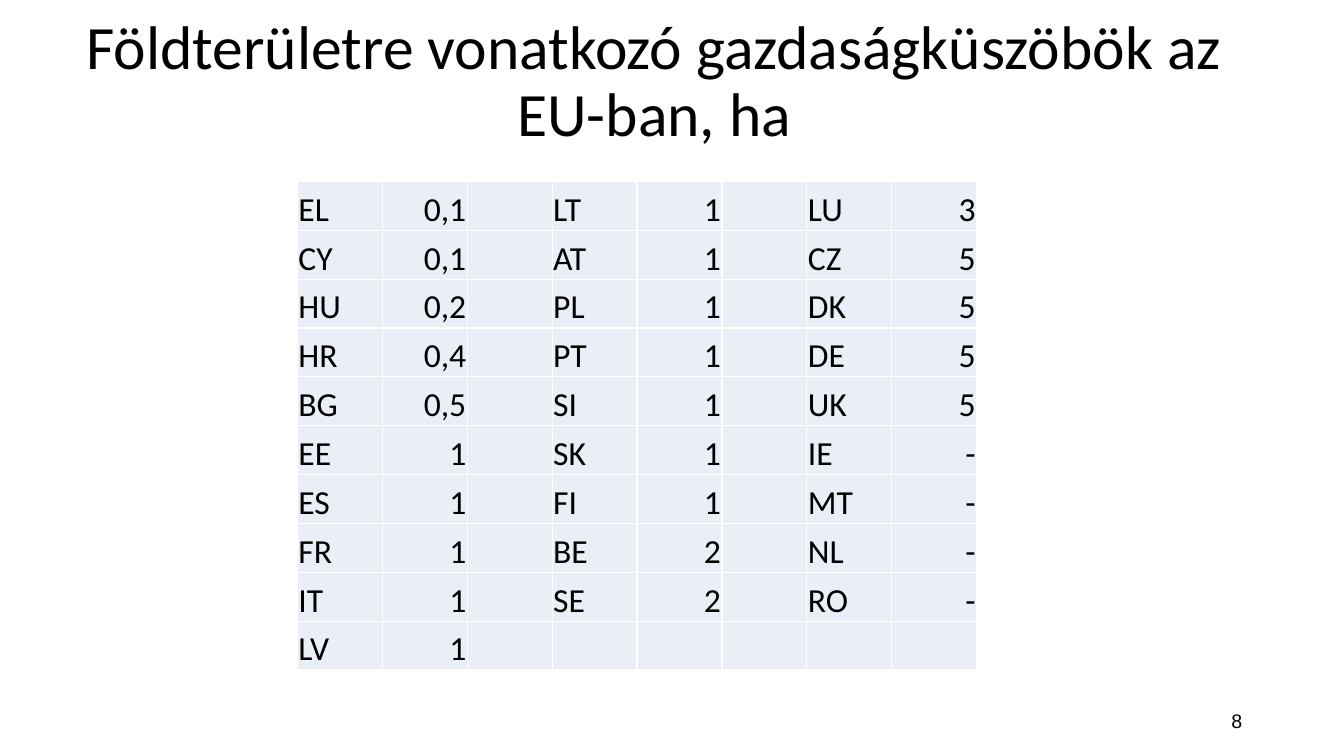
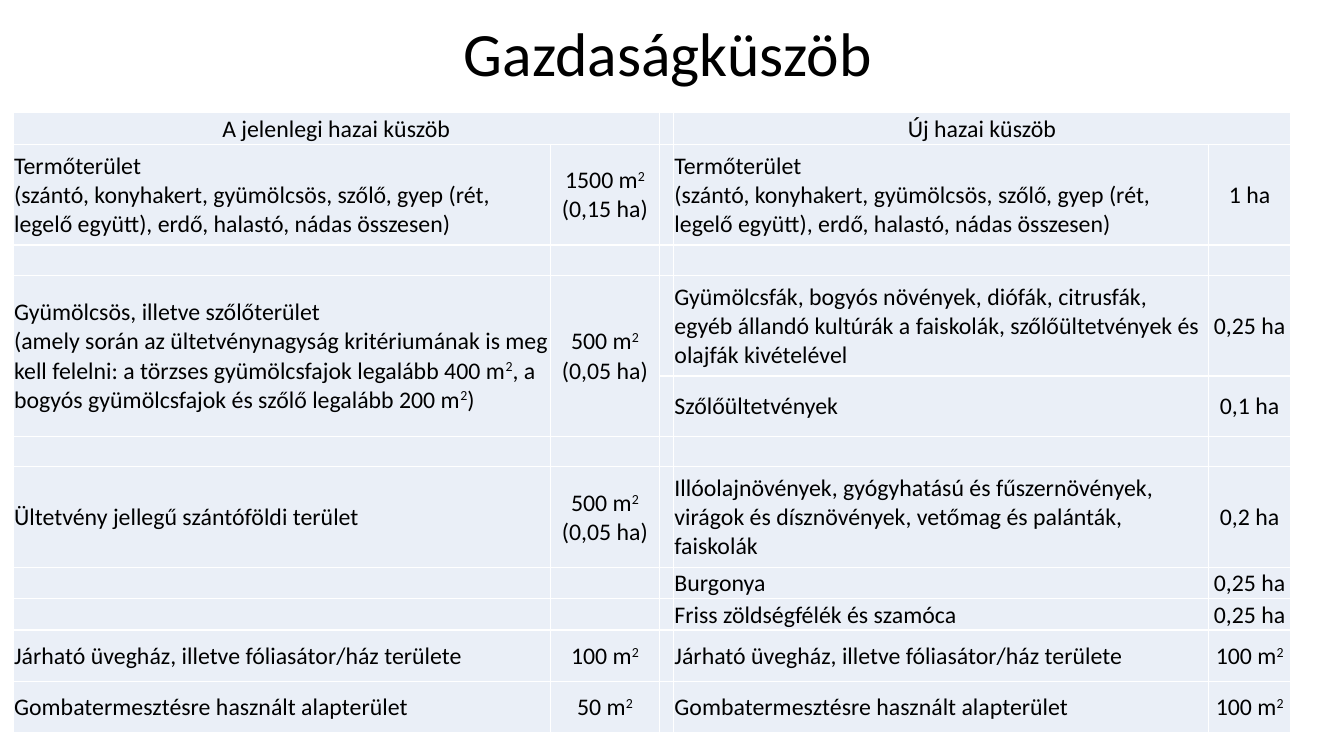
"""Builds two slides on farm size thresholds, each a title over a pale table."""
import dataclasses
import itertools
import typing

import lxml.etree
import pptx
import pptx.dml.color
import pptx.enum.text
import pptx.oxml.ns
import pptx.util

ALIGN = pptx.enum.text.PP_ALIGN
ANCHOR = pptx.enum.text.MSO_ANCHOR
LEFT, CENTER, RIGHT = ALIGN.LEFT, ALIGN.CENTER, ALIGN.RIGHT
qn = pptx.oxml.ns.qn
Inches = pptx.util.Inches


@dataclasses.dataclass(frozen=True)
class Theme:
    """Colours, fonts and type sizes of the deck."""
    ink: str = "000000"
    cell: str = "EAEFF7"
    rule: str = "FFFFFF"
    font: str = "Calibri"
    number_font: str = "Arial"
    title: float = 44
    number: float = 14
    country: float = 24
    threshold: float = 17


@dataclasses.dataclass(frozen=True)
class Box:
    """A rectangle in inches."""
    left: float
    top: float
    width: float
    height: float

    def emu(self) -> tuple[int, ...]:
        """Return the four lengths in slide units."""
        return tuple(Inches(v) for v in dataclasses.astuple(self))


@dataclasses.dataclass(frozen=True)
class Grid:
    """A table's corner, column widths, row heights and cell format."""
    left: float
    top: float
    cols: list[float]
    rows: list[float]
    aligns: list[typing.Any]
    size: float
    anchor: typing.Any

    def box(self) -> Box:
        """Return the rectangle that the grid fills."""
        return Box(self.left, self.top, sum(self.cols), sum(self.rows))


THEME = Theme()
NUMBER_BOX = Box(9.42, 6.95, 3, 0.4)

COUNTRIES = [
    ["EL 0,1", "CY 0,1", "HU 0,2", "HR 0,4", "BG 0,5",
     "EE 1", "ES 1", "FR 1", "IT 1", "LV 1"],
    ["LT 1", "AT 1", "PL 1", "PT 1", "SI 1", "SK 1", "FI 1", "BE 2", "SE 2"],
    ["LU 3", "CZ 5", "DK 5", "DE 5", "UK 5", "IE -", "MT -", "NL -", "RO -"],
]
COUNTRY_GRID = Grid(2.95, 1.8, [6.74 / 8] * 8, [4.85 / 10] * 10,
                    [LEFT, RIGHT, LEFT] * 2 + [LEFT, RIGHT],
                    THEME.country, ANCHOR.BOTTOM)

LAND = ("Termőterület\n(szántó, konyhakert, gyümölcsös, szőlő, gyep (rét, "
        "legelő együtt), erdő, halastó, nádas összesen)")
ORCHARD = ("Gyümölcsös, illetve szőlőterület\n(amely során az ültetvénynagyság "
           "kritériumának is meg kell felelni: a törzses gyümölcsfajok legalább "
           "400 m^2, a bogyós gyümölcsfajok és szőlő legalább 200 m^2)")
FRUIT = ("Gyümölcsfák, bogyós növények, diófák, citrusfák, egyéb állandó "
         "kultúrák a faiskolák, szőlőültetvények és olajfák kivételével")
HERBS = ("Illóolajnövények, gyógyhatású és fűszernövények, virágok és "
         "dísznövények, vetőmag és palánták, faiskolák")
GREENHOUSE = "Járható üvegház, illetve fóliasátor/ház területe"
MUSHROOM = "Gombatermesztésre használt alapterület"
SMALL_PLOT = "500 m^2\n(0,05 ha)"
BLANK = [""] * 5
THRESHOLDS = [
    ["A jelenlegi hazai küszöb", "", "", "Új hazai küszöb", ""],
    [LAND, "1500 m^2\n(0,15 ha)", "", LAND, "1 ha"],
    BLANK,
    [ORCHARD, SMALL_PLOT, "", FRUIT, "0,25 ha"],
    ["", "", "", "Szőlőültetvények", "0,1 ha"],
    BLANK,
    ["Ültetvény jellegű szántóföldi terület", SMALL_PLOT, "", HERBS, "0,2 ha"],
    ["", "", "", "Burgonya", "0,25 ha"],
    ["", "", "", "Friss zöldségfélék és szamóca", "0,25 ha"],
    [GREENHOUSE, "100 m^2", "", GREENHOUSE, "100 m^2"],
    [MUSHROOM, "50 m^2", "", MUSHROOM, "100 m^2"],
]
THRESHOLD_GRID = Grid(0.13, 1.12, [5.33, 1.08, 0.14, 5.31, 0.81],
                      [0.31, 1, 0.3, 1, 0.6, 0.3, 1, 0.31, 0.31, 0.51, 0.51],
                      [LEFT, CENTER, LEFT, LEFT, CENTER],
                      THEME.threshold, ANCHOR.MIDDLE)
HEADINGS = [(0, 0), (0, 3)]
MERGES = [((0, 0), (0, 1)), ((0, 3), (0, 4)), ((3, 0), (4, 0)), ((3, 1), (4, 1))]


def write(tf: typing.Any, text: str, *, size: float, align: typing.Any,
          font: str = THEME.font, spacing: float | None = None) -> None:
    """Write text into a frame, with ^2 as a raised 2 and newlines as breaks."""
    p = tf.paragraphs[0]
    p.alignment = align
    p.line_spacing = spacing
    sz = str(int(size * 100))
    if not text:
        lxml.etree.SubElement(p._p, qn("a:endParaRPr"), sz=sz)
    for i, line in enumerate(text.split("\n")):
        if i:
            p.add_line_break()
            lxml.etree.SubElement(p._p[-1], qn("a:rPr"), sz=sz)
        for j, part in enumerate(line.replace("^2", "^2^").split("^")):
            if not part:
                continue
            r = p.add_run()
            r.text = part
            r.font.size = pptx.util.Pt(size)
            r.font.name = font
            r.font.color.rgb = pptx.dml.color.RGBColor.from_string(THEME.ink)
            if j % 2:
                r._r.get_or_add_rPr().set("baseline", "30000")


def style_cell(cell: typing.Any, anchor: typing.Any) -> None:
    """Give a cell its margins, white borders and pale fill."""
    cell.margin_left = cell.margin_right = cell.margin_top = Inches(0.01)
    cell.margin_bottom = 0
    cell.vertical_anchor = anchor
    tc_pr = cell._tc.get_or_add_tcPr()
    for side in ("lnL", "lnR", "lnT", "lnB"):
        ln = lxml.etree.SubElement(tc_pr, qn(f"a:{side}"), w="12700")
        fill = lxml.etree.SubElement(ln, qn("a:solidFill"))
        lxml.etree.SubElement(fill, qn("a:srgbClr"), val=THEME.rule)
    cell.fill.solid()
    cell.fill.fore_color.rgb = pptx.dml.color.RGBColor.from_string(THEME.cell)


def add_grid(s: typing.Any, grid: Grid, values: list[list[str]],
             headings: typing.Sequence = (), merges: typing.Sequence = ()) -> None:
    """Add a table that follows the grid."""
    table = s.shapes.add_table(len(grid.rows), len(grid.cols), *grid.box().emu()).table
    table.first_row = table.horz_banding = False
    for col, width in zip(table.columns, grid.cols):
        col.width = Inches(width)
    for row, height in zip(table.rows, grid.rows):
        row.height = Inches(height)
    for i, row_values in enumerate(values):
        for j, text in enumerate(row_values):
            cell = table.cell(i, j)
            heading = (i, j) in headings
            style_cell(cell, ANCHOR.BOTTOM if heading else grid.anchor)
            write(cell.text_frame, text, size=grid.size,
                  align=CENTER if heading else grid.aligns[j])
    for first, last in merges:
        table.cell(*first).merge(table.cell(*last))


def add_slide(prs: typing.Any, title: str, box: Box) -> typing.Any:
    """Add a slide with its title placed in the box."""
    s = prs.slides.add_slide(prs.slide_layouts[5])
    sp = s.shapes.title
    sp.left, sp.top, sp.width, sp.height = box.emu()
    sp.text_frame.vertical_anchor = ANCHOR.MIDDLE
    write(sp.text_frame, title, size=THEME.title, align=CENTER, spacing=0.9)
    return s


def add_number(s: typing.Any, number: int) -> None:
    """Add the page number at the lower right."""
    tf = s.shapes.add_textbox(*NUMBER_BOX.emu()).text_frame
    tf.word_wrap = True
    tf.vertical_anchor = ANCHOR.MIDDLE
    write(tf, str(number), size=THEME.number, align=RIGHT, font=THEME.number_font)


def country_rows() -> list[list[str]]:
    """Lay the country groups side by side, with an empty column between."""
    rows = []
    for entries in itertools.zip_longest(*COUNTRIES, fillvalue=" "):
        cells = [[*entry.split(" "), ""] for entry in entries]
        rows.append(list(itertools.chain(*cells))[:-1])
    return rows


def main() -> None:
    """Build and save the deck."""
    prs = pptx.Presentation()
    prs.slide_width, prs.slide_height = Inches(13.33), Inches(7.5)
    s = add_slide(prs, "Földterületre vonatkozó gazdaságküszöbök az EU-ban, ha",
                  Box(0.74, 0.1, 11.5, 1.45))
    add_number(s, 8)
    add_grid(s, COUNTRY_GRID, country_rows())
    s = add_slide(prs, "Gazdaságküszöb", Box(0.25, 0, 12.75, 1.12))
    add_grid(s, THRESHOLD_GRID, THRESHOLDS, HEADINGS, MERGES)
    prs.save("out.pptx")


if __name__ == "__main__":
    main()
